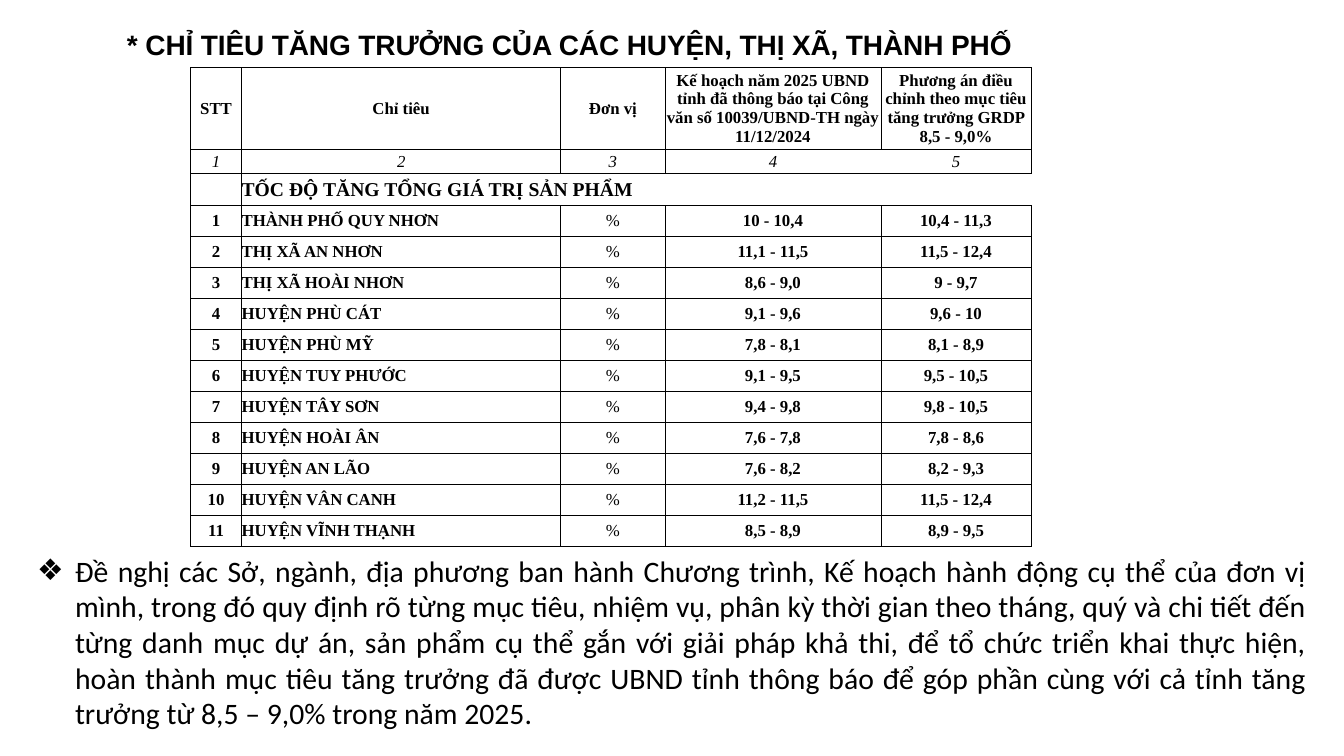
from pptx import Presentation
from pptx.dml.color import RGBColor
from pptx.enum.text import MSO_ANCHOR as Anchor, MSO_AUTO_SIZE as AutoSize, PP_ALIGN as Align
from pptx.oxml.ns import qn
from pptx.util import Pt
from lxml.etree import SubElement

BLACK = RGBColor(0, 0, 0)
SERIF = "Times New Roman"

TITLE = "* CHỈ TIÊU TĂNG TRƯỞNG CỦA CÁC HUYỆN, THỊ XÃ, THÀNH PHỐ"
REQUEST = (
    "Đề nghị các Sở, ngành, địa phương ban hành Chương trình, Kế hoạch hành động cụ thể "
    "của đơn vị mình, trong đó quy định rõ từng mục tiêu, nhiệm vụ, phân kỳ thời gian theo "
    "tháng, quý và chi tiết đến từng danh mục dự án, sản phẩm cụ thể gắn với giải pháp khả thi, "
    "để tổ chức triển khai thực hiện, hoàn thành mục tiêu tăng trưởng đã được UBND tỉnh thông báo "
    "để góp phần cùng với cả tỉnh tăng trưởng từ 8,5 – 9,0% trong năm 2025."
)
HEADERS = [
    "STT",
    "Chỉ tiêu",
    "Đơn vị",
    "Kế hoạch năm 2025 UBND tỉnh đã thông báo tại Công văn số 10039/UBND-TH ngày 11/12/2024",
    "Phương án điều chỉnh theo mục tiêu tăng trưởng GRDP 8,5 - 9,0%",
]
SECTION = "TỐC ĐỘ TĂNG TỔNG GIÁ TRỊ SẢN PHẨM"
DISTRICTS = [
    ("THÀNH PHỐ QUY NHƠN", "10 - 10,4", "10,4 - 11,3"),
    ("THỊ XÃ AN NHƠN", "11,1 - 11,5", "11,5 - 12,4"),
    ("THỊ XÃ HOÀI NHƠN", "8,6 - 9,0", "9 - 9,7"),
    ("HUYỆN PHÙ CÁT", "9,1 - 9,6", "9,6 - 10"),
    ("HUYỆN PHÙ MỸ", "7,8 - 8,1", "8,1 - 8,9"),
    ("HUYỆN TUY PHƯỚC", "9,1 - 9,5", "9,5 - 10,5"),
    ("HUYỆN TÂY SƠN", "9,4 - 9,8", "9,8 - 10,5"),
    ("HUYỆN HOÀI ÂN", "7,6 - 7,8", "7,8 - 8,6"),
    ("HUYỆN AN LÃO", "7,6 - 8,2", "8,2 - 9,3"),
    ("HUYỆN VÂN CANH", "11,2 - 11,5", "11,5 - 12,4"),
    ("HUYỆN VĨNH THẠNH", "8,5 - 8,9", "8,9 - 9,5"),
]
NUMBERS = [str(number) for number in range(1, len(HEADERS) + 1)]
ROWS = [HEADERS, NUMBERS, ["", SECTION, "", "", ""]] + [
    [str(rank), name, "%", plan, target]
    for rank, (name, plan, target) in enumerate(DISTRICTS, 1)
]
COLUMN_WIDTHS = [36.5, 228, 74.5, 154.2, 107.3]
ROW_HEIGHTS = [58.6, 17.2, 23] + [22.15] * len(DISTRICTS)
NUMBER_ROW, SECTION_ROW = 1, 2
OPEN_SIDES = {
    (NUMBER_ROW, 3): "R",
    (NUMBER_ROW, 4): "L",
    (SECTION_ROW, 1): "R",
    (SECTION_ROW, 2): "LR",
    (SECTION_ROW, 3): "LR",
    (SECTION_ROW, 4): "LR",
}


def write(frame, text, font=SERIF, size=12, bold=True, italic=False, align=Align.CENTER):
    paragraph = frame.paragraphs[0]
    paragraph.alignment = align
    run = paragraph.add_run()
    run.text = text
    run.font.name = font
    run.font.size = Pt(size)
    run.font.bold = bold
    run.font.italic = italic
    run.font.color.rgb = BLACK
    return paragraph


def place(shape, left, top, width, height):
    shape.left, shape.top, shape.width, shape.height = Pt(left), Pt(top), Pt(width), Pt(height)
    frame = shape.text_frame
    frame.word_wrap = True
    frame.auto_size = AutoSize.NONE
    frame.vertical_anchor = Anchor.TOP
    return frame


def draw_borders(cell, open_sides):
    properties = cell._tc.get_or_add_tcPr()
    for side in "LRTB":
        line = SubElement(properties, qn(f"a:ln{side}"), w=str(Pt(0.5)))
        if side in open_sides:
            SubElement(line, qn("a:noFill"))
        else:
            fill = SubElement(line, qn("a:solidFill"))
            SubElement(fill, qn("a:srgbClr"), val=str(BLACK))


def add_title(slide):
    frame = place(slide.shapes.title, 83.5, 11.5, 649, 29.5)
    frame.margin_right = 0
    paragraph = write(frame, TITLE, font="Arial", size=20, align=Align.JUSTIFY)
    paragraph.line_spacing = 1.2
    paragraph.space_before = Pt(6)
    paragraph.runs[0].font._element.set("spc", "-10")


def add_request(slide):
    frame = place(slide.placeholders[1], 19.4, 391, 921.6, 149)
    paragraph = write(frame, REQUEST, font="Calibri", size=21.2, bold=False, align=Align.JUSTIFY)
    paragraph.space_before = Pt(6)
    properties = paragraph._p.get_or_add_pPr()
    properties.set("marL", str(Pt(27)))
    properties.set("indent", str(Pt(-27)))
    SubElement(properties, qn("a:buChar"), char="❖")


def add_targets(slide):
    table = slide.shapes.add_table(
        len(ROWS), len(HEADERS), Pt(136.1), Pt(48.2), Pt(sum(COLUMN_WIDTHS)), Pt(sum(ROW_HEIGHTS))
    ).table
    table.first_row = table.horz_banding = False
    for column, width in zip(table.columns, COLUMN_WIDTHS):
        column.width = Pt(width)
    for row, height in zip(table.rows, ROW_HEIGHTS):
        row.height = Pt(height)
    for r, texts in enumerate(ROWS):
        for c, text in enumerate(texts):
            cell = table.cell(r, c)
            draw_borders(cell, OPEN_SIDES.get((r, c), ""))
            cell.fill.background()
            cell.margin_left = cell.margin_right = cell.margin_top = cell.margin_bottom = 0
            cell.vertical_anchor = Anchor.MIDDLE
            if text:
                write(
                    cell.text_frame,
                    text,
                    size=14 if r == SECTION_ROW else 12,
                    bold=r != NUMBER_ROW and text != "%",
                    italic=r == NUMBER_ROW,
                    align=Align.LEFT if c == 1 and r >= SECTION_ROW else Align.CENTER,
                )
    table.cell(SECTION_ROW, 1).merge(table.cell(SECTION_ROW, 4))


def main():
    presentation = Presentation()
    presentation.slide_width, presentation.slide_height = Pt(960), Pt(540)
    slide = presentation.slides.add_slide(presentation.slide_layouts[1])
    add_title(slide)
    add_request(slide)
    add_targets(slide)
    presentation.save("out.pptx")


if __name__ == "__main__":
    main()
